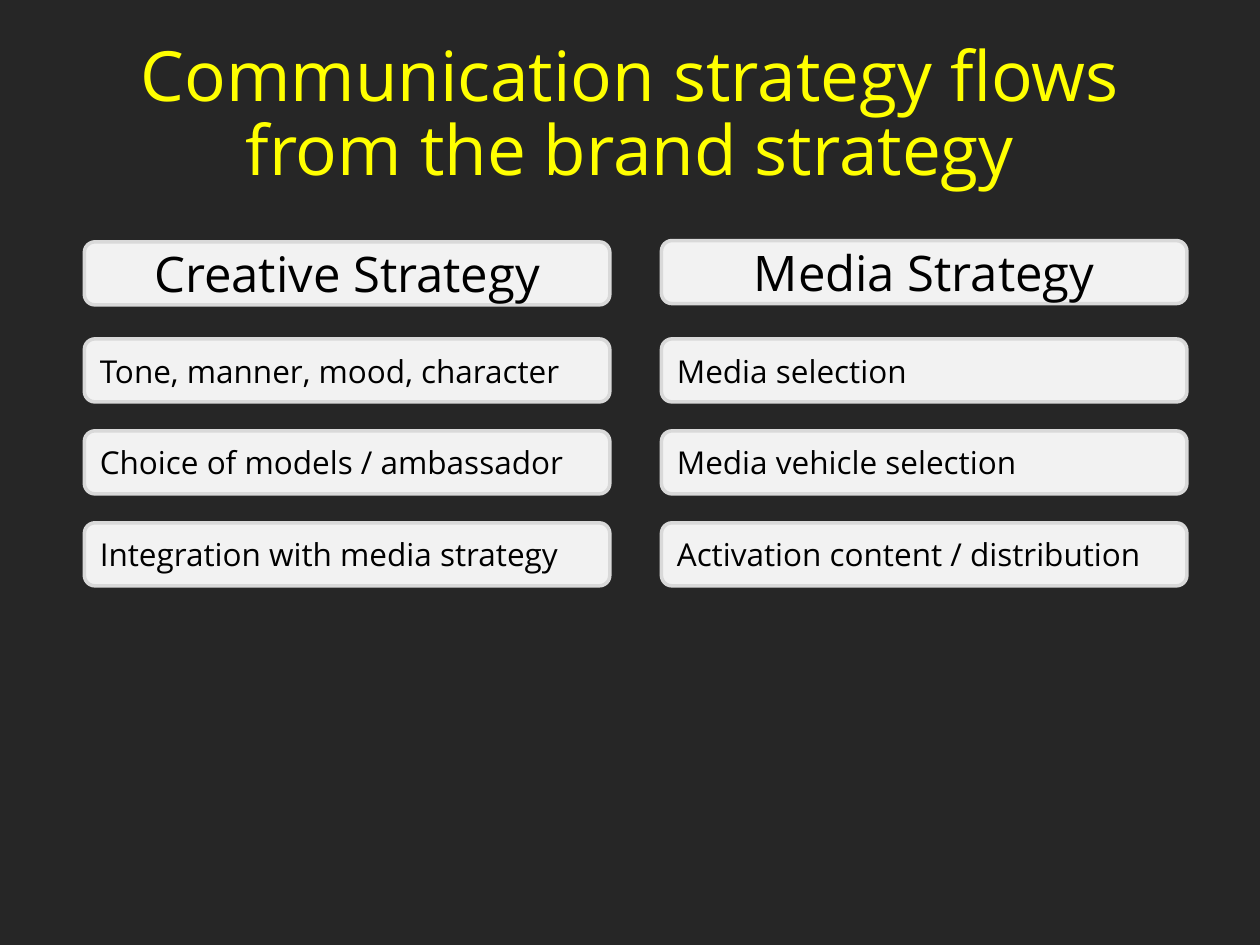
from pptx import Presentation
from pptx.dml.color import RGBColor
from pptx.enum.shapes import MSO_SHAPE
from pptx.enum.text import MSO_ANCHOR, PP_ALIGN
from pptx.util import Inches, Pt

ROUNDED = MSO_SHAPE.ROUNDED_RECTANGLE
MIDDLE = MSO_ANCHOR.MIDDLE
LEFT, CENTER = PP_ALIGN.LEFT, PP_ALIGN.CENTER
FONT = "Open Sans"
COLORS = {
    "background": "262626",
    "title": "FFFF00",
    "box": "F2F2F2",
    "border": "D9D9D9",
    "text": "000000",
}


def color(name):
    return RGBColor.from_string(COLORS[name])


def write(shape, text, size, color_name, align):
    tf = shape.text_frame
    tf.word_wrap = True
    tf.vertical_anchor = MIDDLE
    p = tf.paragraphs[0]
    p.text = text
    p.alignment = align
    p.font.name = FONT
    p.font.size = Pt(size)
    p.font.color.rgb = color(color_name)
    return p


prs = Presentation()
prs.slide_width, prs.slide_height = Inches(10), Inches(7.5)
s = prs.slides.add_slide(prs.slide_layouts[6])
s.background.fill.solid()
s.background.fill.fore_color.rgb = color("background")

# Title
title = s.shapes.add_textbox(Inches(0.5), Inches(0.3), Inches(9), Inches(1.25))
p = write(title, "Communication strategy flows from the brand strategy", 39.6, "title", CENTER)
p.line_spacing = 0.88

# Strategy columns: left, heading top, heading, items
columns = [
    (0.67, 1.92, "Creative Strategy", [
        "Tone, manner, mood, character",
        "Choice of models / ambassador",
        "Integration with media strategy",
    ]),
    (5.25, 1.91, "Media Strategy", [
        "Media selection",
        "Media vehicle selection",
        "Activation content / distribution",
    ]),
]
ITEM_TOP, ITEM_STEP = 2.69, 0.73

for left, heading_top, heading, items in columns:
    boxes = [(heading_top, heading, 28, CENTER)]
    boxes += [(ITEM_TOP + i * ITEM_STEP, item, 18, LEFT) for i, item in enumerate(items)]
    for top, text, size, align in boxes:
        sp = s.shapes.add_shape(ROUNDED, Inches(left), Inches(top), Inches(4.17), Inches(0.5))
        sp.shadow.inherit = False
        sp.fill.solid()
        sp.fill.fore_color.rgb = color("box")
        sp.line.color.rgb = color("border")
        sp.line.width = Pt(2)
        write(sp, text, size, "text", align)

prs.save("out.pptx")
